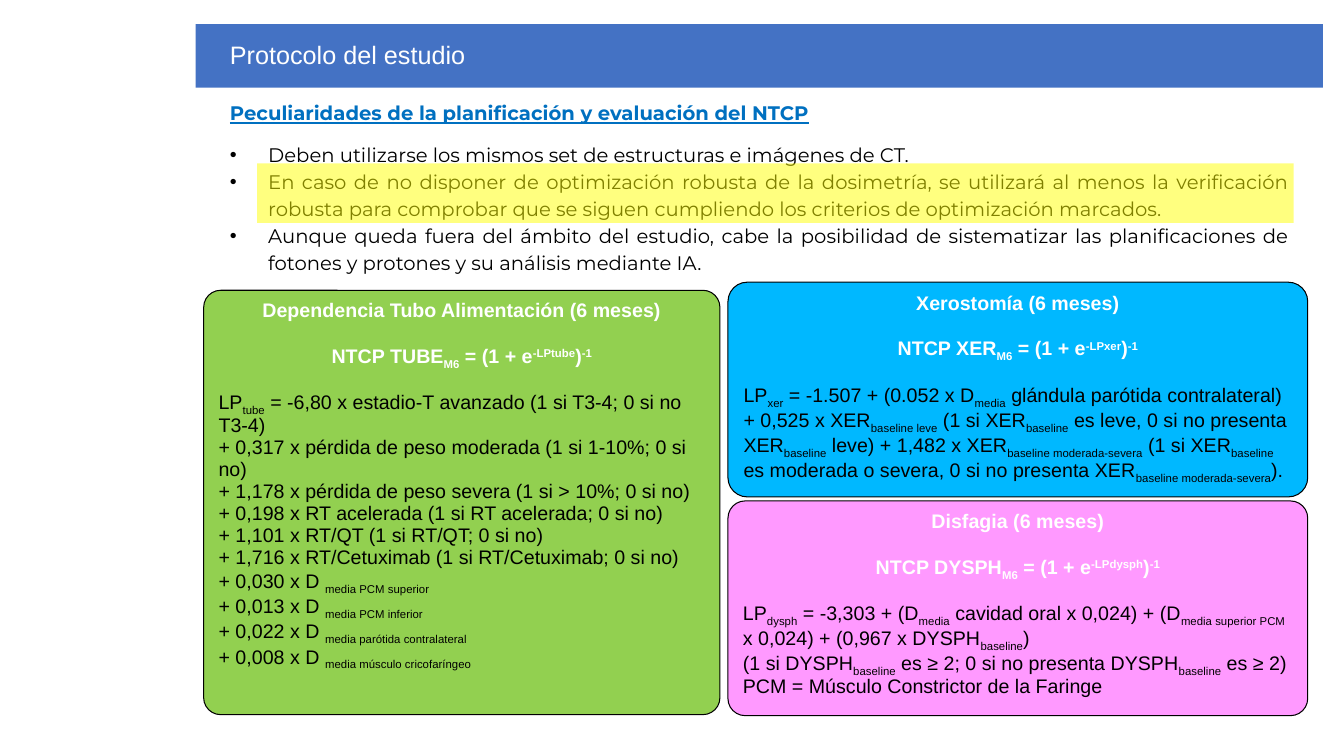
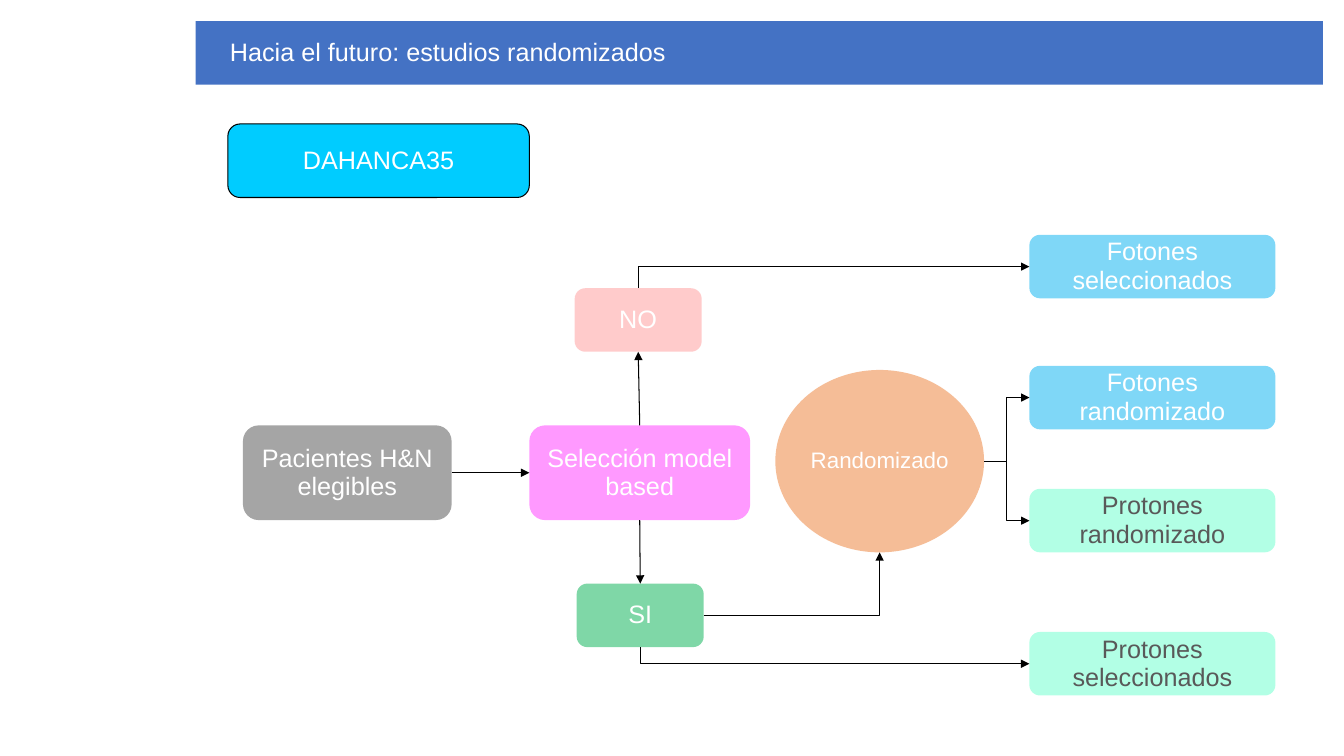
from pptx import Presentation
from pptx.dml.color import RGBColor
from pptx.enum.shapes import MSO_CONNECTOR, MSO_SHAPE
from pptx.enum.text import MSO_ANCHOR, MSO_AUTO_SIZE, PP_ALIGN
from pptx.oxml.ns import qn
from pptx.util import Inches, Pt
from lxml import etree

ROUNDED, OVAL = MSO_SHAPE.ROUNDED_RECTANGLE, MSO_SHAPE.FLOWCHART_CONNECTOR
RECT = MSO_SHAPE.RECTANGLE
STRAIGHT, ELBOW = MSO_CONNECTOR.STRAIGHT, MSO_CONNECTOR.ELBOW
TOP_ANCHOR, MIDDLE = MSO_ANCHOR.TOP, MSO_ANCHOR.MIDDLE
LEFT_ALIGN, CENTER, JUSTIFY = PP_ALIGN.LEFT, PP_ALIGN.CENTER, PP_ALIGN.JUSTIFY
NO_FIT = MSO_AUTO_SIZE.NONE
TOP, LEFT, BOTTOM, RIGHT = range(4)  # connection sites of a rectangle

COLORS = {
    "band": "4472C4", "white": "FFFFFF", "black": "000000", "dark": "595959",
    "heading": "0070C0", "highlight": "FFFF00", "tube": "92D050",
    "xer": "00B8FF", "pink": "FF99FF", "trial": "00CCFF", "gray": "A5A5A5",
    "no": "FF9999", "yes": "00B050", "photon": "00B0F0", "proton": "66FFCC",
    "random": "ED7D31",
}
RGB = {name: RGBColor.from_string(value) for name, value in COLORS.items()}
TITLE_ONLY, TITLE_AND_BODY = 5, 1


def add_runs(p, text, size, color, bold=False, align=CENTER, font="Arial", spacing=0.93):
    """Fill a paragraph; |_x| is a subscript and |^x| a superscript."""
    p.alignment, p.line_spacing = align, spacing
    for i, part in enumerate(text.split("|")):
        if not part:
            continue
        script = i % 2 == 1
        r = p.add_run()
        r.text = part[1:] if script else part
        r.font.name, r.font.size, r.font.bold = font, Pt(size), bold
        r.font.color.rgb = RGB[color]
        if script:
            r.font._element.set("baseline", "-25000" if part[0] == "_" else "30000")


def add_box(s, kind, left, top, width, height, fill, alpha=None, outline=False):
    sp = s.shapes.add_shape(kind, Inches(left), Inches(top), Inches(width), Inches(height))
    sp.shadow.inherit = False
    sp.fill.solid()
    sp.fill.fore_color.rgb = RGB[fill]
    if alpha:
        color = sp._element.spPr.find(qn("a:solidFill"))[0]
        etree.SubElement(color, qn("a:alpha")).set("val", str(alpha * 1000))
    if outline:
        sp.line.color.rgb, sp.line.width = RGB["black"], Pt(0.75)
    else:
        sp.line.fill.background()
    return sp


prs = Presentation()
prs.slide_width, prs.slide_height = Inches(13.33), Inches(7.5)

# Both slides with their title bands
slides = []
for layout, top, title in [
    (TITLE_AND_BODY, 0.24, "Protocolo del estudio"),
    (TITLE_ONLY, 0.21, "Hacia el futuro: estudios randomizados"),
]:
    s = prs.slides.add_slide(prs.slide_layouts[layout])
    band = s.shapes.title
    band.left, band.top, band.width, band.height = (
        Inches(1.94), Inches(top), Inches(11.18), Inches(0.63))
    band.fill.solid()
    band.fill.fore_color.rgb = RGB["band"]
    tf = band.text_frame
    tf.auto_size, tf.vertical_anchor = NO_FIT, MIDDLE
    tf.margin_left = Inches(0.34)
    add_runs(tf.paragraphs[0], title, 18, "white", align=LEFT_ALIGN)
    slides.append(s)
protocol, future = slides

# Slide 1: planning notes
body = protocol.placeholders[1]
body.left, body.top, body.width, body.height = (
    Inches(2.18), Inches(0.92), Inches(10.71), Inches(1.85))
tf = body.text_frame
tf.auto_size = NO_FIT
p = tf.paragraphs[0]
pPr = p._p.get_or_add_pPr()
pPr.set("marL", "0")
pPr.set("indent", "0")
etree.SubElement(pPr, qn("a:buNone"))
add_runs(p, "Peculiaridades de la planificación y evaluación del NTCP", 14, "heading",
         bold=True, align=JUSTIFY, font="Montserrat", spacing=1.15)
p.runs[0].font.underline = True
p.space_before, p.space_after = Pt(0), Pt(10)
for note in [
    "Deben utilizarse los mismos set de estructuras e imágenes de CT.",
    "En caso de no disponer de optimización robusta de la dosimetría, se utilizará al menos "
    "la verificación robusta para comprobar que se siguen cumpliendo los criterios de "
    "optimización marcados.",
    "Aunque queda fuera del ámbito del estudio, cabe la posibilidad de sistematizar las "
    "planificaciones de fotones y protones y su análisis mediante IA.",
]:
    p = tf.add_paragraph()
    pPr = p._p.get_or_add_pPr()
    pPr.set("marL", str(Inches(0.38)))
    pPr.set("indent", str(-Inches(0.38)))
    etree.SubElement(pPr, qn("a:buChar")).set("char", "•")
    add_runs(p, note, 14, "black", align=JUSTIFY, font="Montserrat", spacing=1.15)
    p.space_before = p.space_after = Pt(0.1)

# Slide 1: one card per NTCP model
for left, top, width, height, corner, fill, heading, formula, lines in [
    (7.22, 2.8, 5.75, 2.13, 0.09, "xer", "Xerostomía (6 meses)",
     "NTCP XER|_M6| = (1 + e|^-LPxer|)|^-1", [
         "LP|_xer| = -1.507 + (0.052 x D|_media| glándula parótida contralateral)",
         "+ 0,525 x XER|_baseline leve| (1 si XER|_baseline| es leve, 0 si no presenta "
         "XER|_baseline| leve) + 1,482 x XER|_baseline moderada-severa| (1 si XER|_baseline| "
         "es moderada o severa, 0 si no presenta XER|_baseline moderada-severa|).",
     ]),
    (7.22, 4.97, 5.75, 2.13, 0.08, "pink", "Disfagia (6 meses)",
     "NTCP DYSPH|_M6| = (1 + e|^-LPdysph|)|^-1", [
         "LP|_dysph| = -3,303 + (D|_media| cavidad oral x 0,024) + (D|_media superior PCM| "
         "x 0,024) + (0,967 x DYSPH|_baseline|)",
         "(1 si DYSPH|_baseline| es ≥ 2; 0 si no presenta DYSPH|_baseline| es ≥ 2)",
         "PCM = Músculo Constrictor de la Faringe",
     ]),
    (2.02, 2.88, 5.12, 4.21, 0.04, "tube", "Dependencia Tubo Alimentación (6 meses)",
     "NTCP TUBE|_M6| = (1 + e|^-LPtube|)|^-1", [
         "LP|_tube| = -6,80 x estadio-T avanzado (1 si T3-4; 0 si no T3-4)",
         "+ 0,317 x pérdida de peso moderada (1 si 1-10%; 0 si no)",
         "+ 1,178 x pérdida de peso severa (1 si > 10%; 0 si no)",
         "+ 0,198 x RT acelerada (1 si RT acelerada; 0 si no)",
         "+ 1,101 x RT/QT (1 si RT/QT; 0 si no)",
         "+ 1,716 x RT/Cetuximab (1 si RT/Cetuximab; 0 si no)",
         "+ 0,030 x D |_media PCM superior",
         "+ 0,013 x D |_media PCM inferior",
         "+ 0,022 x D |_media parótida contralateral",
         "+ 0,008 x D |_media músculo cricofaríngeo",
     ]),
]:
    card = add_box(protocol, ROUNDED, left, top, width, height, fill, outline=True)
    card.adjustments[0] = corner
    tf = card.text_frame
    tf.word_wrap, tf.vertical_anchor = True, TOP_ANCHOR
    for i, line in enumerate([heading, formula] + lines):
        p = tf.paragraphs[0] if i == 0 else tf.add_paragraph()
        if i < 2:
            add_runs(p, line, 14, "white", bold=True)
            p.space_after = Pt(15.5)
        else:
            add_runs(p, line, 14, "black", align=LEFT_ALIGN)
            p.space_after = Pt(0.1)

add_box(protocol, RECT, 2.55, 1.62, 10.28, 0.59, "highlight", alpha=50)

# Slide 2: flow chart nodes
nodes = {}
for name, kind, left, top, width, height, fill, alpha, color, label in [
    ("trial", ROUNDED, 2.26, 1.23, 2.99, 0.73, "trial", None, "white", "DAHANCA35"),
    ("patients", ROUNDED, 2.41, 4.22, 2.07, 0.94, "gray", None, "white",
     "Pacientes H&N elegibles"),
    ("selection", ROUNDED, 5.25, 4.22, 2.19, 0.94, "pink", None, "white",
     "Selección model based"),
    ("no", ROUNDED, 5.7, 2.86, 1.26, 0.63, "no", 50, "white", "NO"),
    ("yes", ROUNDED, 5.72, 5.79, 1.26, 0.63, "yes", 50, "white", "SI"),
    ("photons random", ROUNDED, 10.21, 3.63, 2.44, 0.63, "photon", 50, "white",
     "Fotones randomizado"),
    ("photons selected", ROUNDED, 10.21, 2.33, 2.44, 0.63, "photon", 50, "white",
     "Fotones\nseleccionados"),
    ("protons random", ROUNDED, 10.21, 4.85, 2.44, 0.63, "proton", 50, "dark",
     "Protones randomizado"),
    ("protons selected", ROUNDED, 10.21, 6.27, 2.44, 0.63, "proton", 50, "dark",
     "Protones\nseleccionados"),
    ("random", OVAL, 7.69, 3.67, 2.07, 1.81, "random", 50, "white", "Randomizado"),
]:
    sp = add_box(future, kind, left, top, width, height, fill, alpha, outline=name == "trial")
    tf = sp.text_frame
    tf.word_wrap, tf.vertical_anchor = True, MIDDLE
    if kind == OVAL:
        tf.margin_left = tf.margin_right = tf.margin_top = tf.margin_bottom = 0
    for i, line in enumerate(label.split("\n")):
        p = tf.paragraphs[0] if i == 0 else tf.add_paragraph()
        add_runs(p, line, 16 if kind == OVAL else 18, color)
    nodes[name] = sp

# Slide 2: arrows. A one-bend connector leaves its begin point horizontally,
# so those that rise or drop first begin at the target, with the head there.
for begin, begin_site, end, end_site, preset, head in [
    ("patients", RIGHT, "selection", LEFT, "line", "tailEnd"),
    ("selection", TOP, "no", BOTTOM, "line", "tailEnd"),
    ("selection", BOTTOM, "yes", TOP, "line", "tailEnd"),
    ("photons selected", LEFT, "no", TOP, "bentConnector2", "headEnd"),
    ("protons selected", LEFT, "yes", BOTTOM, "bentConnector2", "headEnd"),
    ("yes", RIGHT, "random", BOTTOM, "bentConnector2", "tailEnd"),
    ("random", RIGHT, "photons random", LEFT, "bentConnector3", "tailEnd"),
    ("random", RIGHT, "protons random", LEFT, "bentConnector3", "tailEnd"),
]:
    kind = STRAIGHT if preset == "line" else ELBOW
    arrow = future.shapes.add_connector(kind, 0, 0, 0, 0)
    arrow.begin_connect(nodes[begin], begin_site)
    arrow.end_connect(nodes[end], end_site)
    # The oval has eight sites, so each side has twice the rectangle's index
    for node, site, tag in [(begin, begin_site, "a:stCxn"), (end, end_site, "a:endCxn")]:
        if node == "random":
            next(arrow._element.iter(qn(tag))).set("idx", str(2 * site))
    arrow.line.color.rgb, arrow.line.width = RGB["black"], Pt(0.75)
    spPr = arrow._element.spPr
    spPr.find(qn("a:prstGeom")).set("prst", preset)
    etree.SubElement(spPr.find(qn("a:ln")), qn("a:" + head)).set("type", "triangle")
    etree.SubElement(spPr, qn("a:effectLst"))

prs.save("out.pptx")
